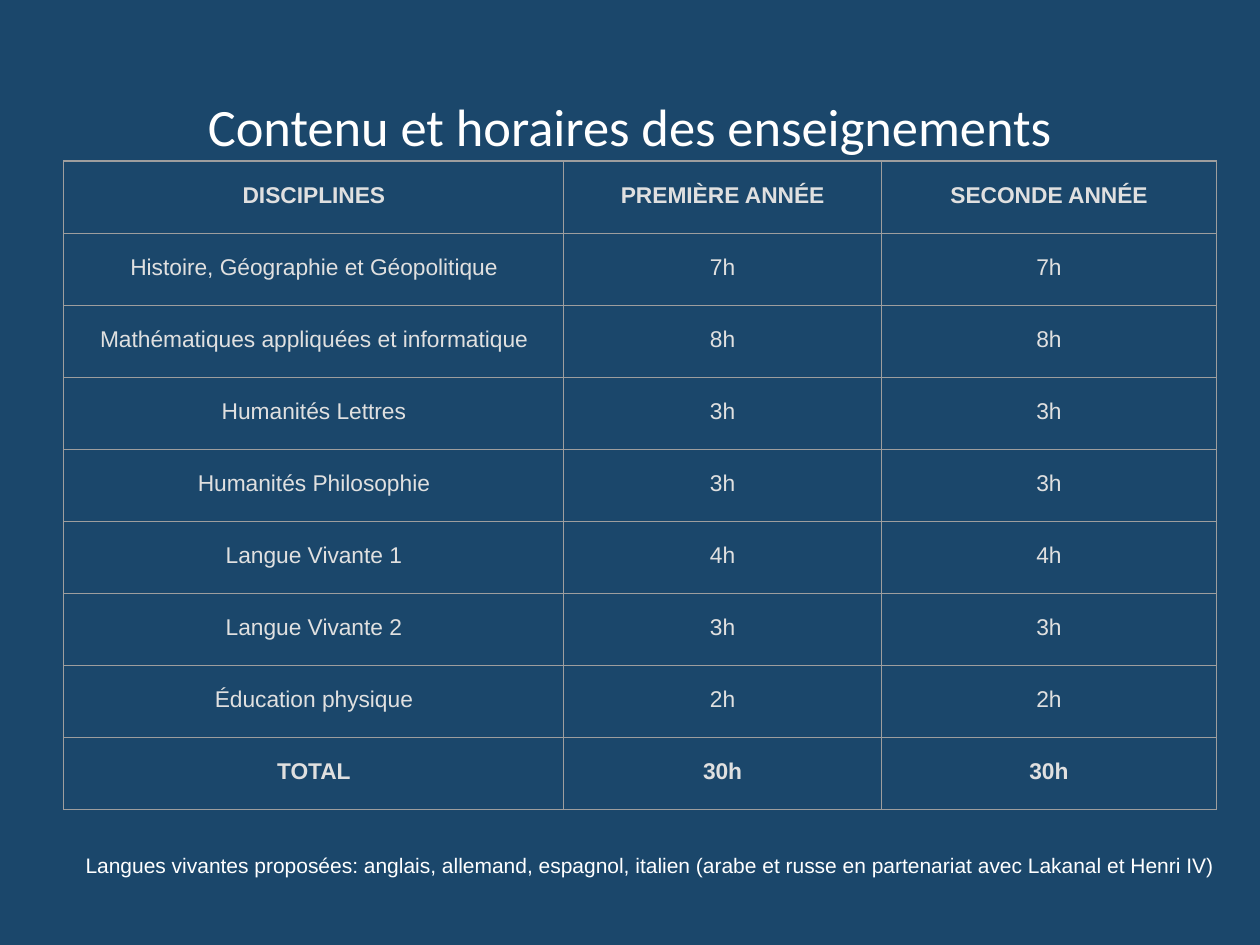
from pptx import Presentation
from pptx.dml.color import RGBColor as Rgb
from pptx.enum.text import MSO_ANCHOR as Anchor, MSO_AUTO_SIZE as AutoSize, PP_ALIGN as Align
from pptx.oxml import parse_xml
from pptx.oxml.ns import nsdecls
from pptx.util import Pt

COLORS = {"background": "1B476B", "heading": "FFFFFF", "cell": "E0E0E0", "border": "9E9E9E"}
HOURS = [
    ("Histoire, Géographie et Géopolitique", 7),
    ("Mathématiques appliquées et informatique", 8),
    ("Humanités Lettres", 3),
    ("Humanités Philosophie", 3),
    ("Langue Vivante 1", 4),
    ("Langue Vivante 2", 3),
    ("Éducation physique", 2),
]
COLUMN_WIDTHS = (285.8, 181.4, 191.6)
ROW_HEIGHT = 41.2


class Timetable:
    """Holds the style and the current slide, and draws each kind of element."""

    def __init__(self, slide):
        self.slide = slide
        background = slide.background.fill
        background.solid()
        background.fore_color.rgb = Rgb.from_string(COLORS["background"])

    def add_words(self, paragraph, words, color, align, **font_format):
        paragraph.alignment = align
        run = paragraph.add_run()
        run.text = words
        run.font.color.rgb = Rgb.from_string(COLORS[color])
        for name, value in font_format.items():
            setattr(run.font, name, value)

    def text(self, words, box, align, frame_format, **font_format):
        frame = self.slide.shapes.add_textbox(*map(Pt, box)).text_frame
        for name, value in {"word_wrap": True, **frame_format}.items():
            setattr(frame, name, value)
        self.add_words(frame.paragraphs[0], words, "heading", align, **font_format)

    def border(self, cell):
        properties = cell._tc.get_or_add_tcPr()
        for position, side in enumerate(("lnL", "lnR", "lnT", "lnB")):
            properties.insert(position, parse_xml(
                f'<a:{side} {nsdecls("a")} w="{Pt(0.75)}"><a:solidFill>'
                f'<a:srgbClr val="{COLORS["border"]}"/></a:solidFill></a:{side}>'))

    def cell(self, cell, words, bold):
        cell_format = {
            "margin_left": Pt(8.5), "margin_right": Pt(8.5),
            "margin_top": Pt(3.6), "margin_bottom": Pt(3.6),
            "vertical_anchor": Anchor.TOP,
        }
        for name, value in cell_format.items():
            setattr(cell, name, value)
        cell.fill.background()
        self.border(cell)
        paragraph = cell.text_frame.paragraphs[0]
        paragraph.line_spacing = 1.6
        self.add_words(paragraph, words, "cell", Align.CENTER,
                       name="Arial", size=Pt(13), bold=bold)

    def table(self, rows, left, top):
        box = (left, top, sum(COLUMN_WIDTHS), ROW_HEIGHT * len(rows))
        table = self.slide.shapes.add_table(
            len(rows), len(COLUMN_WIDTHS), *map(Pt, box)).table
        table.horz_banding = False
        for column, width in zip(table.columns, COLUMN_WIDTHS):
            column.width = Pt(width)
        for index, row in enumerate(rows):
            table.rows[index].height = Pt(ROW_HEIGHT)
            for column, words in enumerate(row):
                self.cell(table.cell(index, column), words, index in (0, len(rows) - 1))


def main():
    presentation = Presentation()
    presentation.slide_width, presentation.slide_height = Pt(720), Pt(540)
    timetable = Timetable(presentation.slides.add_slide(presentation.slide_layouts[6]))

    title_margins = {f"margin_{side}": Pt(7.2) for side in ("left", "right", "top", "bottom")}
    timetable.text("Contenu et horaires des enseignements", (24.5, 46.8, 671, 59.8),
                   Align.CENTER, title_margins, name="Calibri", size=Pt(30))

    total = sum(hours for _, hours in HOURS)
    lessons = [(subject, f"{hours}h", f"{hours}h") for subject, hours in [*HOURS, ("TOTAL", total)]]
    timetable.table([("DISCIPLINES", "PREMIÈRE ANNÉE", "SECONDE ANNÉE"), *lessons], 36.4, 92)

    timetable.text("Langues vivantes proposées: anglais, allemand, espagnol, italien "
                   "(arabe et russe en partenariat avec Lakanal et Henri IV)",
                   (41.8, 483.8, 669.6, 21.6), Align.LEFT,
                   {"auto_size": AutoSize.SHAPE_TO_FIT_TEXT}, name="Arial", size=Pt(12))
    presentation.save("out.pptx")


if __name__ == "__main__":
    main()
